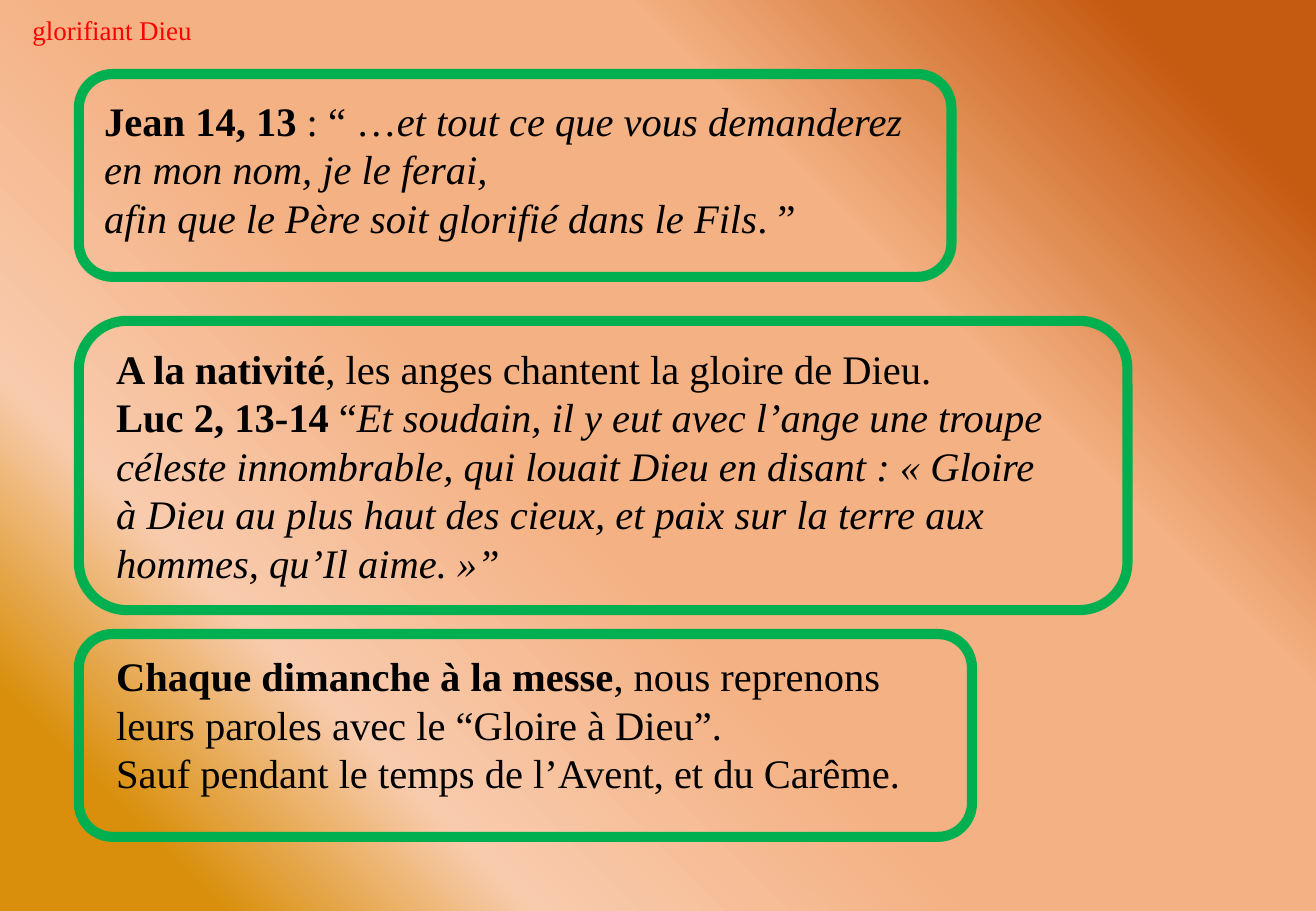
from dataclasses import dataclass

from lxml import etree
from pptx import Presentation
from pptx import util as u
from pptx.dml.color import RGBColor
from pptx.enum import shapes, text
from pptx.oxml.ns import qn


@dataclass(frozen=True)
class Theme:
    """Colours, font and sizes of the slide."""
    font: str = "Times New Roman"
    title_size: int = 16
    body_size: int = 24
    frame_width: int = 6
    title: str = "FF0000"
    body: str = "000000"
    frame: str = "00B050"
    angle: int = 135
    backdrop: tuple = ((9, "C55A11"), (31, "F4B183"), (56, "F4B183"),
                       (76, "F8CBAD"), (90, "D98F0B"))


THEME = Theme()
BOLD, ITALIC, PLAIN = "bold", "italic", "plain"

JEAN = [
    [("Jean 14, 13", BOLD), (" : “ …", PLAIN),
     ("et tout ce que vous demanderez en mon nom, je le ferai,", ITALIC)],
    [("afin que le Père soit glorifié dans le Fils", ITALIC), (". ”", PLAIN)],
]
NATIVITE = [
    [("A la nativité", BOLD), (", les anges chantent la gloire de Dieu.", PLAIN)],
    [("Luc 2, 13-14", BOLD), (" “", PLAIN),
     ("Et soudain, il y eut avec l’ange une troupe céleste innombrable, "
      "qui louait Dieu en disant : « Gloire à Dieu au plus haut des cieux, "
      "et paix sur la terre aux hommes, qu’Il aime. »”", ITALIC)],
]
MESSE = [
    [("Chaque dimanche à la messe", BOLD), (", nous reprenons", PLAIN)],
    [("leurs paroles avec le “Gloire à Dieu”.", PLAIN)],
    [("Sauf pendant le temps de l’Avent, et du Carême.", PLAIN)],
]


def paint_backdrop(slide):
    """Fill the background with the diagonal gradient."""
    fill = slide.background.fill
    fill.gradient()
    fill.gradient_angle = 360 - THEME.angle
    stops = next(slide.element.iter(qn("a:gsLst")))
    for stop in list(stops):
        stops.remove(stop)
    for percent, colour in THEME.backdrop:
        stop = etree.SubElement(stops, qn("a:gs"), pos=str(percent * 1000))
        etree.SubElement(stop, qn("a:srgbClr"), val=colour)


def write_text(parent, box, paragraphs, size, colour):
    """Write styled paragraphs in a box given in centimetres."""
    frame = parent.add_textbox(*map(u.Cm, box)).text_frame
    frame.word_wrap = True
    frame.auto_size = text.MSO_AUTO_SIZE.SHAPE_TO_FIT_TEXT
    for index, parts in enumerate(paragraphs):
        paragraph = frame.add_paragraph() if index else frame.paragraphs[0]
        for words, style in parts:
            run = paragraph.add_run()
            run.text = words
            run.font.name = THEME.font
            run.font.size = u.Pt(size)
            run.font.bold = style == BOLD
            run.font.italic = style == ITALIC
            run.font.color.rgb = RGBColor.from_string(colour)


def add_quote(parent, box, inset, text_size, paragraphs):
    """Draw a green rounded frame with its quotation inset from the corner."""
    border = parent.add_shape(shapes.MSO_SHAPE.ROUNDED_RECTANGLE, *map(u.Cm, box))
    border.shadow.inherit = False
    border.fill.background()
    border.line.color.rgb = RGBColor.from_string(THEME.frame)
    border.line.width = u.Pt(THEME.frame_width)
    left, top = box[0] + inset[0], box[1] + inset[1]
    write_text(parent, (left, top, *text_size), paragraphs,
               THEME.body_size, THEME.body)


def build_slide(slide):
    """Place the heading and the three quotations."""
    paint_backdrop(slide)
    write_text(slide.shapes, (0.43, 0.15, 5.6, 0.94),
               [[("glorifiant Dieu", PLAIN)]], THEME.title_size, THEME.title)
    left = 1.65
    add_quote(slide.shapes, (left, 1.55, 18.24, 4.24), (0.28, 0.33),
              (17.48, 3.33), JEAN)
    add_quote(slide.shapes.add_group_shape().shapes, (left, 6.71, 21.92, 6.05),
              (0.53, 0.35), (20.14, 5.38), NATIVITE)
    add_quote(slide.shapes.add_group_shape().shapes, (left, 13.26, 18.67, 4.24),
              (0.53, 0.23), (18.14, 3.33), MESSE)


def main():
    """Build and save the presentation."""
    deck = Presentation()
    deck.slide_width, deck.slide_height = u.Cm(27.51), u.Cm(19.05)
    build_slide(deck.slides.add_slide(deck.slide_layouts[6]))
    deck.save("out.pptx")


if __name__ == "__main__":
    main()
